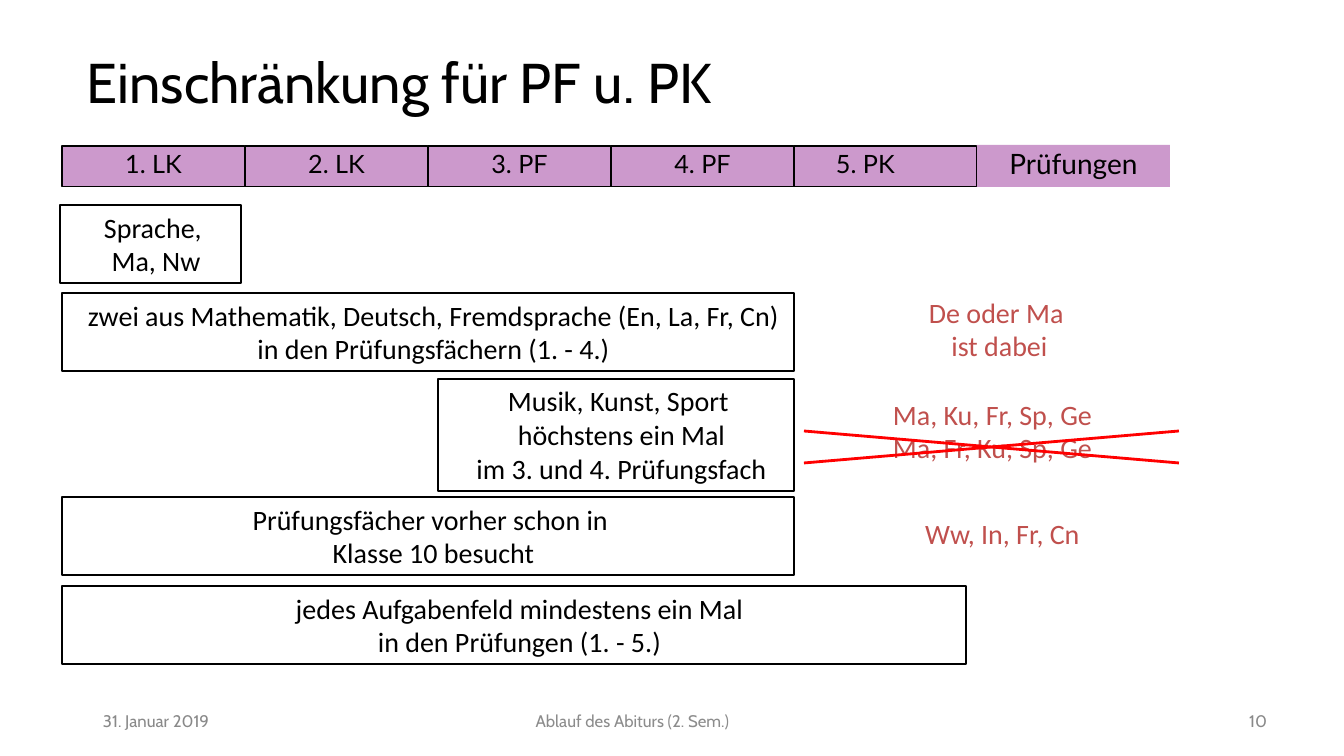
from lxml.etree import SubElement
from pptx import Presentation
from pptx.dml.color import RGBColor
from pptx.enum.shapes import MSO_CONNECTOR, MSO_SHAPE
from pptx.enum.text import MSO_ANCHOR as ANCHOR, PP_ALIGN as ALIGN
from pptx.oxml.ns import qn
from pptx.util import Emu, Pt

EMU_PER_PX = 914400 / 100.8
BLACK, WHITE, PURPLE = "000000", "FFFFFF", "800080"
NOTE_RED, CROSS_RED, GREY = "C0504D", "FF0000", "898989"


def px(length):
    return Emu(round(length * EMU_PER_PX))


def color(value):
    return RGBColor.from_string(value)


class SlideBuilder:
    title_font, header_font, body_font = "Cabin", "Lato", "Calibri"

    def __init__(self, deck):
        self.slide = deck.slides.add_slide(deck.slide_layouts[6])

    def fill_text(self, box, lines, font, size, ink, align, spacing=None,
                  anchor=ANCHOR.TOP, indent=0):
        frame = box.text_frame
        frame.word_wrap = True
        frame.vertical_anchor = anchor
        for index, line in enumerate(lines):
            para = frame.paragraphs[0] if index == 0 else frame.add_paragraph()
            para.text = line
            para.alignment = align
            if spacing:
                para.line_spacing = spacing
            if indent:
                properties = para._p.get_or_add_pPr()
                properties.set("marL", str(px(indent)))
                properties.set("indent", "0")
            para.font.name = font
            para.font.size = Pt(size)
            para.font.color.rgb = color(ink)
        return frame

    def text(self, area, line, size, ink=BLACK, align=ALIGN.LEFT):
        box = self.slide.shapes.add_textbox(*map(px, area))
        self.fill_text(box, [line], self.title_font, size, ink, align, anchor=ANCHOR.MIDDLE)

    def rectangle(self, area, fill, outline=None, width=1.0):
        box = self.slide.shapes.add_shape(MSO_SHAPE.RECTANGLE, *map(px, area))
        box.shadow.inherit = False
        box.fill.solid()
        box.fill.fore_color.rgb = color(fill)
        if outline:
            box.line.color.rgb = color(outline)
            box.line.width = Pt(width)
        else:
            box.line.fill.background()
        return box

    def header_cell(self, area, label=None, size=18, outline=BLACK):
        box = self.rectangle(area, PURPLE, outline, 0.75)
        tint = box._element.spPr.find(qn("a:solidFill"))[0]
        SubElement(tint, qn("a:alpha")).set("val", "40000")
        if label:
            self.fill_text(box, [label], self.header_font, size, BLACK, ALIGN.CENTER, 0.93)

    def header_label(self, area, label):
        box = self.slide.shapes.add_textbox(*map(px, area))
        frame = self.fill_text(box, [label], self.header_font, 18, BLACK, ALIGN.LEFT, 0.93)
        frame.word_wrap = False

    def rule_box(self, area, lines, ink=BLACK, outline=BLACK):
        box = self.rectangle(area, WHITE, outline)
        frame = self.fill_text(box, lines, self.body_font, 20, ink, ALIGN.CENTER, Pt(24), indent=11)
        frame.margin_left = frame.margin_right = px(4)
        frame.margin_top = frame.margin_bottom = px(5)

    def note(self, area, lines):
        self.rule_box(area, lines, NOTE_RED, None)

    def line(self, start, end):
        connector = self.slide.shapes.add_connector(
            MSO_CONNECTOR.STRAIGHT, *map(px, start + end))
        connector.line.color.rgb = color(CROSS_RED)
        connector.line.width = Pt(2)
        SubElement(connector._element.spPr, qn("a:effectLst"))


def main():
    deck = Presentation()
    deck.slide_width, deck.slide_height = px(1344), px(756)
    page = SlideBuilder(deck)

    page.text((77, 40, 1175, 83), "Einschränkung für PF u. PK", 40)

    # Header row of exam subjects
    left, pitch = 62, 183
    for column, label in enumerate(["1. LK", "2. LK", "3. PF", "4. PF", None]):
        page.header_cell((left + column * pitch, 146, pitch, 41), label)
    page.header_cell((left + 5 * pitch, 145, 193, 42), "Prüfungen", 20, None)
    page.header_label((826, 146, 83, 39), "5. PK")

    # Rules, each spanning the subjects it applies to
    page.rule_box((left, 293, 732, 78), [
        "zwei aus Mathematik, Deutsch, Fremdsprache (En, La, Fr, Cn)",
        "in den Prüfungsfächern (1. - 4.)"])
    page.rule_box((438, 379, 356, 112), [
        "Musik, Kunst, Sport ", "höchstens ein Mal", "im 3. und 4. Prüfungsfach"])
    page.rule_box((left, 497, 732, 78), [
        "Prüfungsfächer vorher schon in \vKlasse 10 besucht"])
    page.rule_box((left, 586, 904, 78), [
        "jedes Aufgabenfeld mindestens ein Mal", "in den Prüfungen (1. - 5.)"])
    page.rule_box((60, 205, 181, 78), ["Sprache, ", "Ma, Nw"])

    # Notes on the right
    page.note((847, 290, 294, 78), ["De oder Ma ", "ist dabei"])
    page.note((804, 392, 366, 78), ["Ma, Ku, Fr, Sp, Ge", "Ma, Fr, Ku, Sp, Ge"])
    page.note((855, 511, 284, 44), ["Ww, In, Fr, Cn"])

    # Cross over the excluded combination
    page.line((804, 431), (1179, 463))
    page.line((1179, 431), (804, 463))

    # Footer
    page.text((93, 701, 223, 40), "31. Januar 2019", 12, GREY)
    page.text((323, 701, 619, 40), "Ablauf des Abiturs (2. Sem.)", 12, "8C8C8C", ALIGN.CENTER)
    page.text((964, 701, 313, 40), "10", 12, GREY, ALIGN.RIGHT)

    deck.save("out.pptx")


if __name__ == "__main__":
    main()
